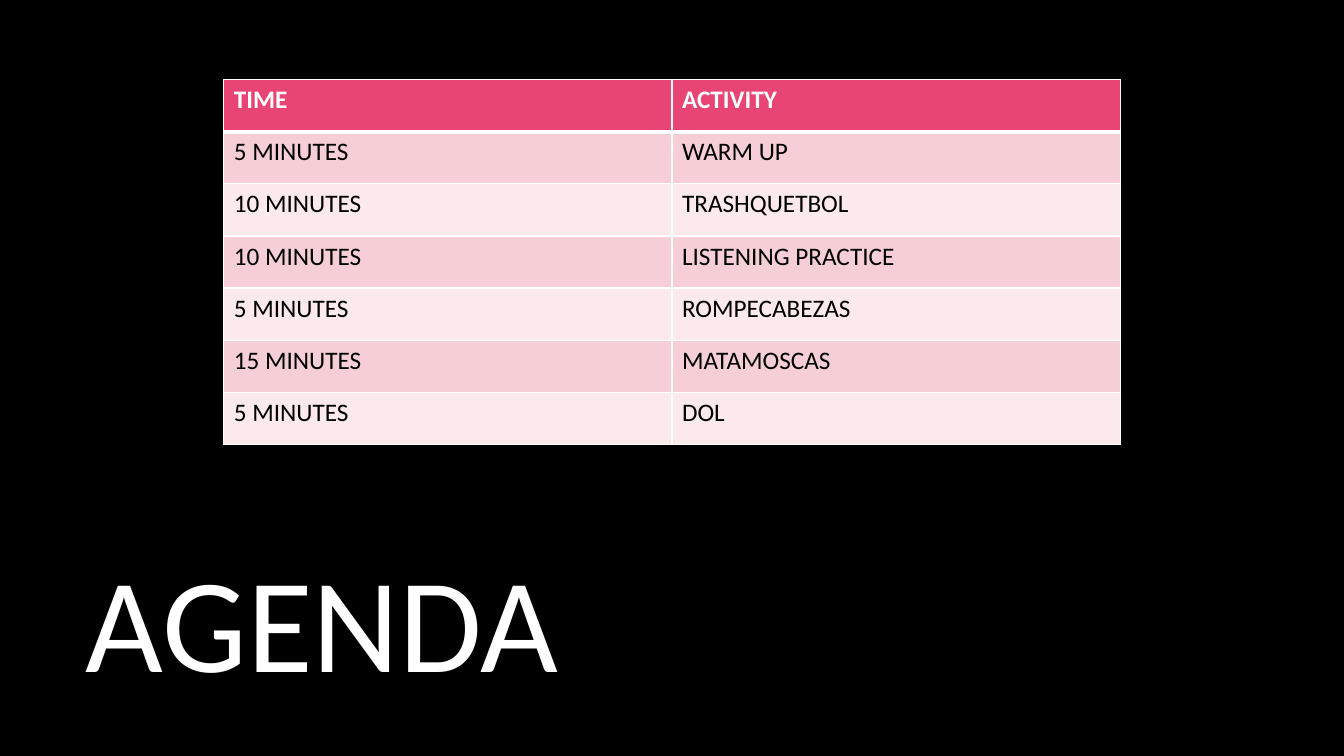
from lxml import etree
from pptx import Presentation
from pptx.dml.color import RGBColor
from pptx.enum.text import MSO_ANCHOR, MSO_AUTO_SIZE, PP_ALIGN
from pptx.oxml.ns import qn
from pptx.util import Inches, Pt

BLACK = RGBColor(0x00, 0x00, 0x00)
WHITE = RGBColor(0xFF, 0xFF, 0xFF)
PINK = RGBColor(0xE8, 0x45, 0x74)
ROSE = RGBColor(0xF6, 0xCF, 0xD6)
BLUSH = RGBColor(0xFB, 0xE9, 0xEB)

AGENDA = [
    ("TIME", "ACTIVITY"),
    ("5 MINUTES", "WARM UP"),
    ("10 MINUTES", "TRASHQUETBOL"),
    ("10 MINUTES", "LISTENING PRACTICE"),
    ("5 MINUTES", "ROMPECABEZAS"),
    ("15 MINUTES", "MATAMOSCAS"),
    ("5 MINUTES", "DOL"),
]


def format_font(font, color, **values):
    for name, value in {"name": "Calibri", **values}.items():
        setattr(font, name, value)
    font.color.rgb = color


def set_borders(cell, widths):
    tcPr = cell._tc.get_or_add_tcPr()
    for i, (side, width) in enumerate(widths.items()):
        ln = etree.Element(qn(f"a:ln{side}"), w=str(Pt(width)))
        fill = etree.SubElement(ln, qn("a:solidFill"))
        etree.SubElement(fill, qn("a:srgbClr"), val=str(WHITE))
        tcPr.insert(i, ln)


def add_title(s, text, left, top, width, height):
    sp = s.shapes.title
    sp.left, sp.top, sp.width, sp.height = left, top, width, height
    tf = sp.text_frame
    frame = {
        "word_wrap": True,
        "auto_size": MSO_AUTO_SIZE.NONE,
        "vertical_anchor": MSO_ANCHOR.TOP,
        "margin_top": Inches(0.12),
    }
    for name, value in frame.items():
        setattr(tf, name, value)
    p = tf.paragraphs[0]
    p.alignment = PP_ALIGN.LEFT
    r = p.add_run()
    r.text = text
    format_font(r.font, WHITE, size=Pt(96))


def add_agenda(s, rows, left, top, width, height):
    table = s.shapes.add_table(len(rows), len(rows[0]), left, top, width, height).table
    for i, texts in enumerate(rows):
        header = i == 0
        fill = PINK if header else (BLUSH, ROSE)[i % 2]
        for j, text in enumerate(texts):
            cell = table.cell(i, j)
            cell.fill.solid()
            cell.fill.fore_color.rgb = fill
            set_borders(cell, {"L": 1, "R": 1, "T": 3 if i == 1 else 1, "B": 3 if header else 1})
            r = cell.text_frame.paragraphs[0].add_run()
            r.text = text
            format_font(r.font, WHITE if header else BLACK, size=Pt(18), bold=header)


def main():
    prs = Presentation()
    prs.slide_width, prs.slide_height = Inches(13.33), Inches(7.5)
    s = prs.slides.add_slide(prs.slide_layouts[5])
    s.background.fill.solid()
    s.background.fill.fore_color.rgb = BLACK
    add_title(s, "AGENDA", Inches(0.75), Inches(5.22), Inches(11.08), Inches(0.94))
    add_agenda(s, AGENDA, Inches(2.22), Inches(0.79), Inches(8.89), Inches(3.62))
    prs.save("out.pptx")


if __name__ == "__main__":
    main()
